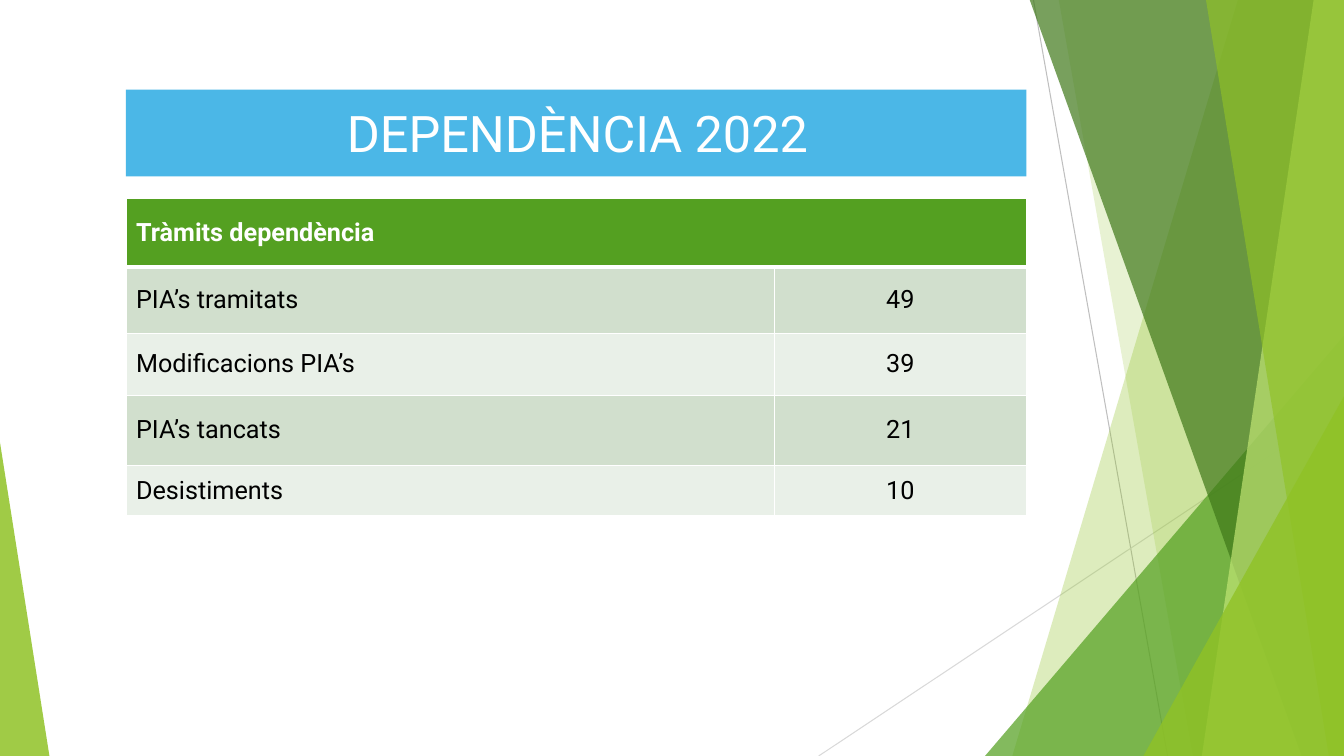
import pptx
import pptx.util
import pptx.dml.color
import pptx.enum.shapes
import pptx.enum.text
import pptx.oxml
import pptx.oxml.ns
from lxml import etree

Inches, Pt = pptx.util.Inches, pptx.util.Pt
RGB = pptx.dml.color.RGBColor.from_string
MIDDLE = pptx.enum.text.MSO_ANCHOR.MIDDLE
CENTER = pptx.enum.text.PP_ALIGN.CENTER
SHAPES = pptx.enum.shapes.MSO_SHAPE
qn = pptx.oxml.ns.qn

FONT = "Roboto"
COLORS = {
    "white": "FFFFFF", "black": "000000", "title": "4BB7E7",
    "lime": "90C226", "pale lime": "C0E474", "green": "54A021", "forest": "3F7819",
    "dark band": "D1DFCD", "light band": "E9F0E8",
    "steep line": "BFBFBF", "shallow line": "D9D9D9",
}
WIDTH, HEIGHT = 13.33, 7.5

prs = pptx.Presentation()
prs.slide_width, prs.slide_height = Inches(WIDTH), Inches(HEIGHT)
slide = prs.slides.add_slide(prs.slide_layouts[6])


def paint(shape, color, opacity=100):
    """Give a shape a plain fill, opacity in percent, without line or shadow."""
    shape.shadow.inherit = False
    shape.line.fill.background()
    shape.fill.solid()
    shape.fill.fore_color.rgb = RGB(COLORS[color])
    if opacity < 100:
        tint = shape._element.spPr.find(".//" + qn("a:srgbClr"))
        etree.SubElement(tint, qn("a:alpha"), val=str(opacity * 1000))


def write(paragraph, text, size, color, bold=False):
    run = paragraph.add_run()
    run.text = text
    run.font.name, run.font.size, run.font.bold = FONT, Pt(size), bold
    run.font.color.rgb = RGB(COLORS[color])


# Thin lines behind the facets
for x1, y1, x2, y2, color in [
    (10.25, 0, 11.58, HEIGHT, "steep line"),
    (WIDTH, 4.03, 8.12, HEIGHT, "shallow line"),
]:
    ray = slide.shapes.add_connector(
        pptx.enum.shapes.MSO_CONNECTOR.STRAIGHT,
        Inches(x1), Inches(y1), Inches(x2), Inches(y2))
    ray.line.color.rgb = RGB(COLORS[color])
    ray.line.width = Pt(0.75)
    etree.SubElement(ray._element.spPr, qn("a:effectLst"))

# Facets from back to front. A band runs from its top-left to its bottom-left x
# and fills to the right edge; a triangle has left, top, width and apex position.
facets = [
    ("band", (12.28, 10.04), "lime", 30),
    ("band", (10.5, 11.83), "lime", 20),
    ("triangle", (9.77, 3.33, 3.56, 1), "green", 72),
    ("band", (10.21, 12.91), "forest", 70),
    ("band", (13.03, 11.92), "pale lime", 70),
    ("band", (11.96, 13.18), "lime", 65),
    ("triangle", (11.34, 3.93, 1.99, 1), "lime", 80),
    ("triangle", (0, 4.39, 0.49, 0), "lime", 85),
]
for kind, geometry, color, opacity in facets:
    if kind == "band":
        top_x, bottom_x = geometry
        outline = slide.shapes.build_freeform(Inches(top_x), Inches(-0.01))
        outline.add_line_segments([
            (Inches(WIDTH), Inches(-0.01)),
            (Inches(WIDTH), Inches(HEIGHT)),
            (Inches(bottom_x), Inches(HEIGHT)),
        ], close=True)
        facet = outline.convert_to_shape()
    else:
        left, top, width, apex = geometry
        facet = slide.shapes.add_shape(
            SHAPES.ISOSCELES_TRIANGLE,
            Inches(left), Inches(top), Inches(width), Inches(HEIGHT - top))
        facet.adjustments[0] = apex
    paint(facet, color, opacity)

# Title banner
banner = slide.shapes.add_shape(
    SHAPES.RECTANGLE, Inches(1.25), Inches(0.89), Inches(8.93), Inches(0.86))
paint(banner, "title")
banner.text_frame.word_wrap = True
banner.text_frame.vertical_anchor = MIDDLE
heading = banner.text_frame.paragraphs[0]
heading.alignment = CENTER
heading.line_spacing = 0.9
write(heading, " ", 44, "white")
write(heading, "DEPENDÈNCIA 2022 ", 36, "white")

# Table of procedures
procedures = [
    ("Tràmits dependència", ""),
    ("PIA’s tramitats", "49"),
    ("Modificacions PIA’s", "39"),
    ("PIA’s tancats", "21"),
    ("Desistiments", "10"),
]
row_heights = [0.68, 0.66, 0.61, 0.7, 0.5]
table = slide.shapes.add_table(
    len(procedures), 2, Inches(1.25), Inches(1.97), Inches(8.93), Inches(3.15)).table
table.columns[0].width, table.columns[1].width = Inches(6.43), Inches(2.5)
table.cell(0, 0).merge(table.cell(0, 1))

for r, (entry, height) in enumerate(zip(procedures, row_heights)):
    table.rows[r].height = Inches(height)
    header = r == 0
    band = "green" if header else ("dark band" if r % 2 else "light band")
    for c, text in enumerate(entry):
        cell = table.cell(r, c)
        cell.vertical_anchor = MIDDLE
        paragraph = cell.text_frame.paragraphs[0]
        if c == 1:
            paragraph.alignment = CENTER
        if text:
            write(paragraph, text, 18, "white" if header else "black", header)
        # Borders must come before the fill in the cell properties
        for side in "LRTB":
            thick = (header and side == "B") or (r == 1 and side == "T")
            border = etree.SubElement(
                cell._tc.get_or_add_tcPr(), qn(f"a:ln{side}"), w=str(Pt(3 if thick else 1)))
            solid = etree.SubElement(border, qn("a:solidFill"))
            etree.SubElement(solid, qn("a:srgbClr"), val=COLORS["white"])
        cell.fill.solid()
        cell.fill.fore_color.rgb = RGB(COLORS[band])

prs.save("out.pptx")
